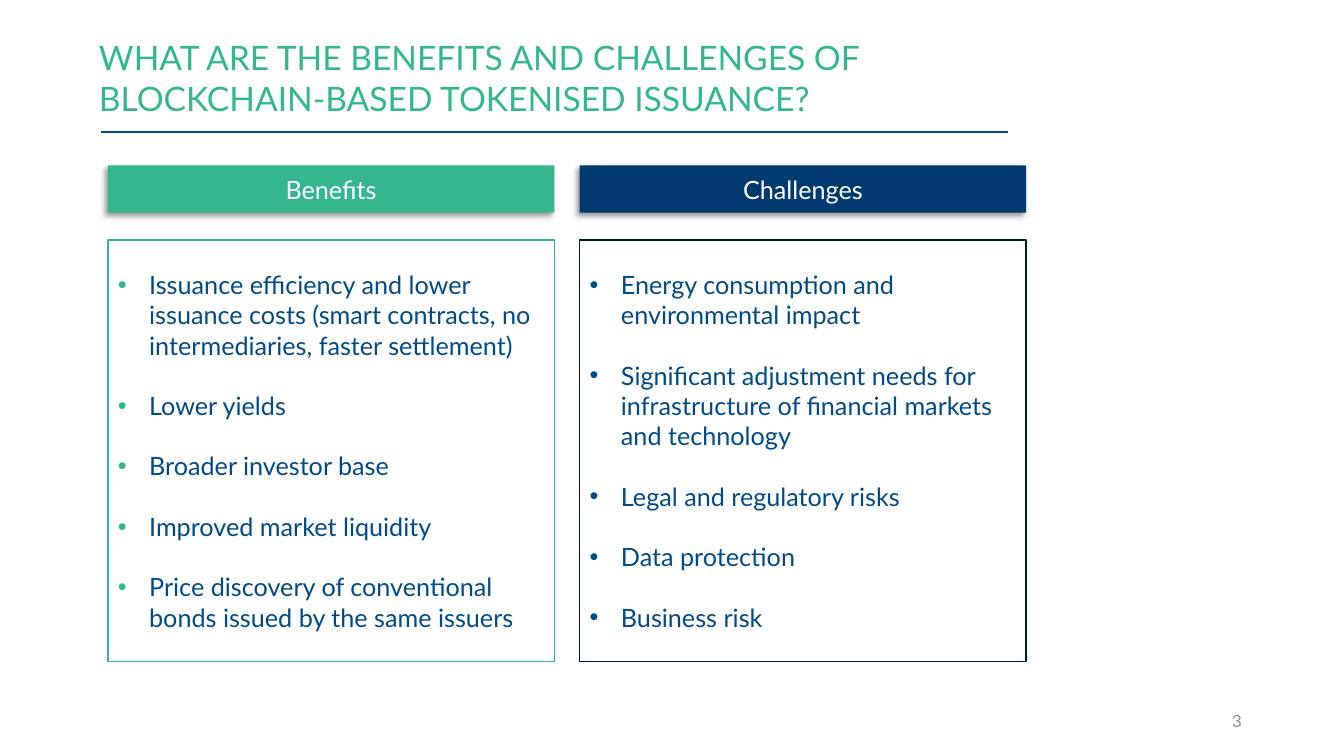
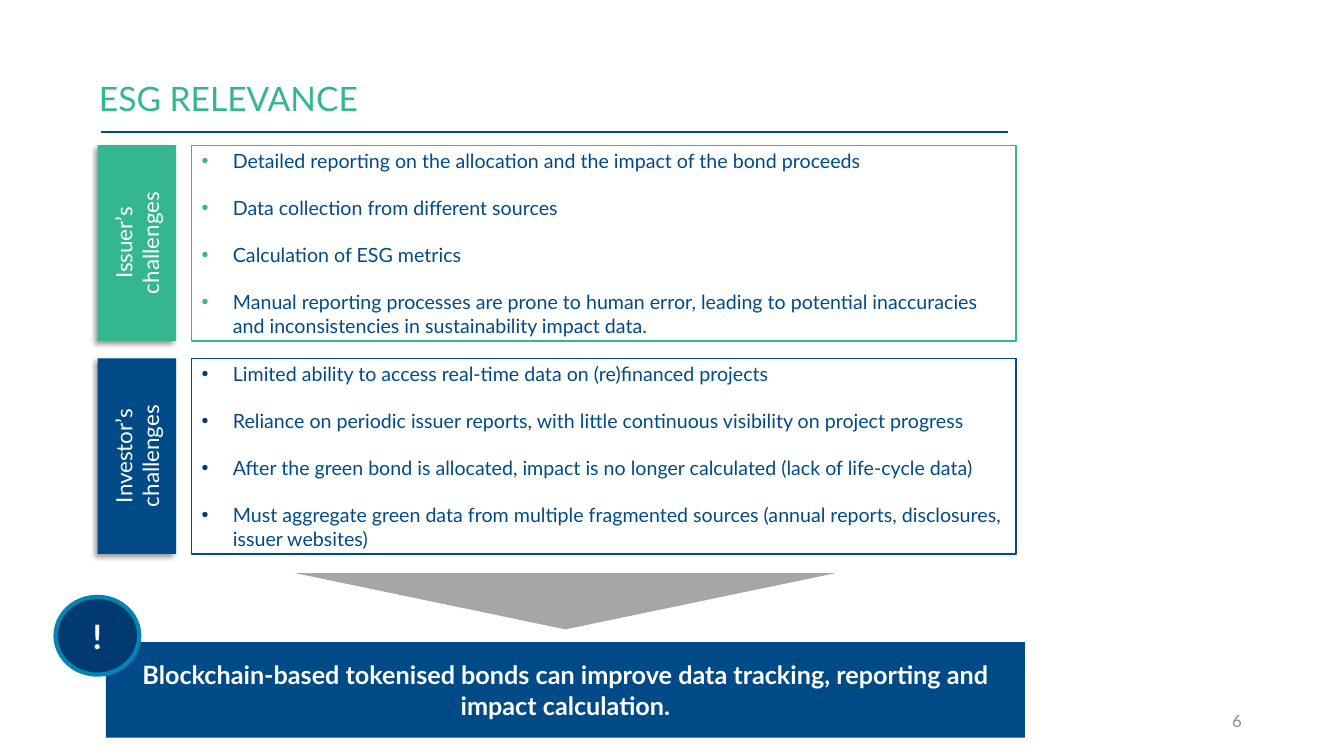
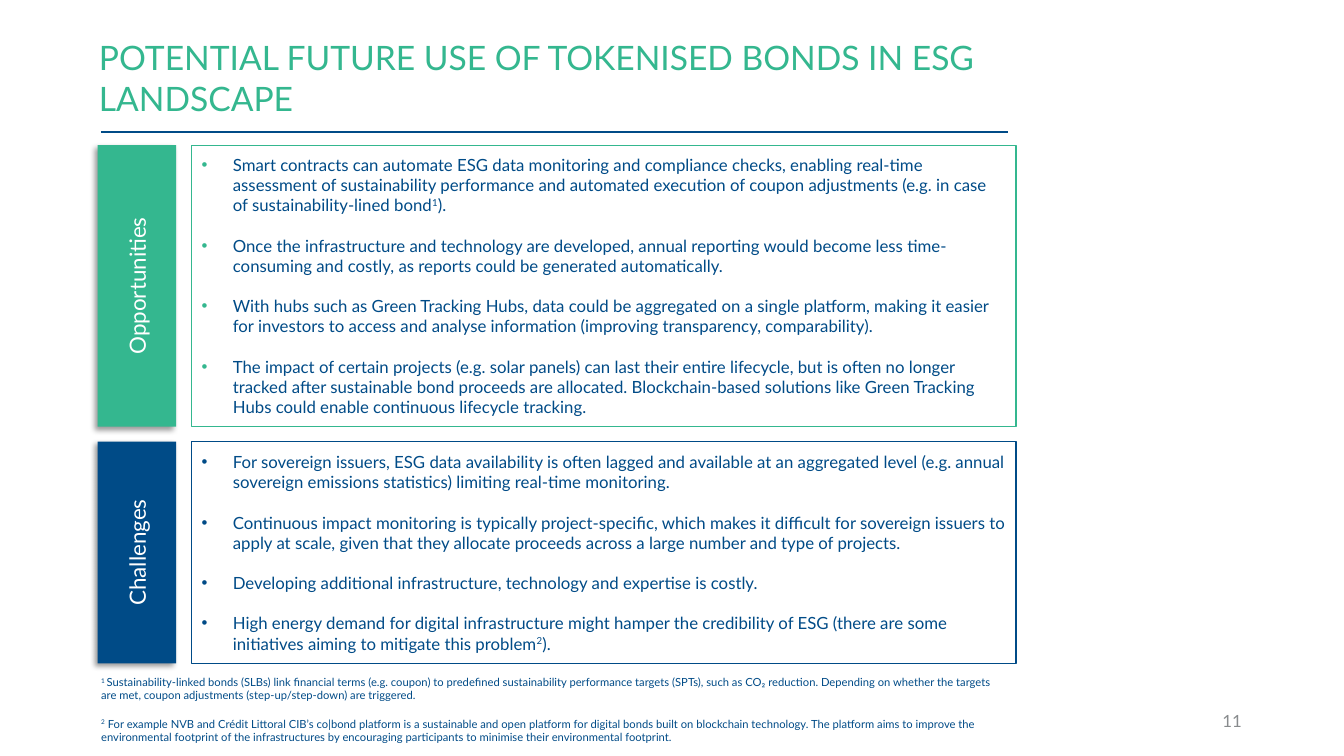
from dataclasses import dataclass

from lxml.etree import SubElement
from pptx import Presentation
from pptx.dml.color import RGBColor
from pptx.enum.shapes import MSO_CONNECTOR, MSO_SHAPE as Preset
from pptx.enum.text import MSO_ANCHOR as Anchor, MSO_AUTO_SIZE as AutoSize, PP_ALIGN as Align
from pptx.oxml.ns import qn
from pptx.util import Cm, Pt


@dataclass(frozen=True)
class Theme:
    font: str = "Lato"
    green: str = "34B78F"
    blue: str = "004B87"
    navy: str = "003A70"
    midnight: str = "001931"
    cyan: str = "0085B4"
    grey: str = "888B8D"
    silver: str = "A6A6A6"
    white: str = "FFFFFF"
    title: int = 24
    lead: int = 18
    tab: int = 16
    body: int = 14
    small: int = 12
    note: int = 8
    line_height: float = 1.2


THEME = Theme()


class Deck:
    def __init__(self):
        self.file = Presentation()
        self.file.slide_width, self.file.slide_height = Cm(33.87), Cm(19.05)
        self.slide = None

    def new_slide(self, title, number):
        """Start a slide with its title, rule and page number."""
        self.slide = self.file.slides.add_slide(self.file.slide_layouts[5])
        heading = self.slide.shapes.title
        heading.left, heading.top, heading.width, heading.height = map(Cm, (2.24, 0.23, 23.2, 2.87))
        self.fill_text(heading.text_frame, [title], THEME.title, THEME.green, anchor=Anchor.BOTTOM)
        rule = self.slide.shapes.add_connector(
            MSO_CONNECTOR.STRAIGHT, Cm(2.54), Cm(3.33), Cm(25.4), Cm(3.33))
        rule.line.color.rgb = RGBColor.from_string(THEME.blue)
        rule.line.width = Pt(1.5)
        SubElement(rule._element.spPr, qn("a:effectLst"))
        self.text((23.93, 17.65, 7.62, 1.02), str(number), THEME.small, THEME.grey,
                  align=Align.RIGHT, anchor=Anchor.MIDDLE)

    def fill_text(self, frame, paragraphs, size, color, align=Align.LEFT, anchor=Anchor.MIDDLE,
                  bold=False, bullet=None):
        """Fill a frame; text between ^ marks is superscript, bullet is the bullet colour."""
        frame.word_wrap = True
        frame.auto_size = AutoSize.NONE
        frame.vertical_anchor = anchor
        for index, content in enumerate(paragraphs):
            paragraph = frame.paragraphs[0] if index == 0 else frame.add_paragraph()
            paragraph.alignment = align
            if bullet:
                self.add_bullet(paragraph, bullet)
                if index:
                    paragraph.space_before = Pt(size * THEME.line_height)
            for part, words in enumerate(content.split("^")):
                if not words:
                    continue
                run = paragraph.add_run()
                run.text = words
                run.font.name, run.font.size, run.font.bold = THEME.font, Pt(size), bold
                run.font.color.rgb = RGBColor.from_string(color)
                if part % 2:
                    run.font._element.set("baseline", "30000")

    def add_bullet(self, paragraph, color):
        props = paragraph._p.get_or_add_pPr()
        props.set("marL", str(Cm(0.79)))
        props.set("indent", str(-Cm(0.79)))
        SubElement(SubElement(props, qn("a:buClr")), qn("a:srgbClr"), val=color)
        SubElement(props, qn("a:buFont"), typeface="Arial")
        SubElement(props, qn("a:buChar"), char="•")

    def text(self, place, content, size, color, align=Align.LEFT, anchor=Anchor.TOP):
        box = self.slide.shapes.add_textbox(*map(Cm, place))
        self.fill_text(box.text_frame, [content], size, color, align, anchor)

    def shape(self, place, fill=None, line=None, line_width=1, preset=Preset.RECTANGLE):
        shape = self.slide.shapes.add_shape(preset, *map(Cm, place))
        shape.shadow.inherit = False
        if fill:
            shape.fill.solid()
            shape.fill.fore_color.rgb = RGBColor.from_string(fill)
        else:
            shape.fill.background()
        if line:
            shape.line.color.rgb = RGBColor.from_string(line)
            shape.line.width = Pt(line_width)
        else:
            shape.line.fill.background()
        return shape

    def label(self, place, lines, fill, size, upright=False):
        """Filled header with a soft shadow; upright text reads from bottom to top."""
        header = self.shape(place, fill)
        effects = header._element.spPr.find(qn("a:effectLst"))
        shadow = SubElement(effects, qn("a:outerShdw"), blurRad=str(Pt(4)), dist=str(Pt(3)),
                            dir=str(135 * 60000), algn="tr", rotWithShape="0")
        tint = SubElement(shadow, qn("a:srgbClr"), val="000000")
        SubElement(tint, qn("a:alpha"), val="40000")
        self.fill_text(header.text_frame, lines, size, THEME.white, Align.CENTER)
        if upright:
            header.text_frame._txBody.bodyPr.set("vert", "vert270")

    def panel(self, place, points, line, bullet, size):
        frame = self.shape(place, line=line).text_frame
        self.fill_text(frame, points, size, THEME.blue, bullet=bullet)

    def column(self, index, heading, points, fill, line, bullet):
        left, width = 2.72 + 11.89 * index, 11.25
        self.panel((left, 6.05, width, 10.62), points, line, bullet, THEME.lead)
        self.label((left, 4.17, width, 1.19), [heading], fill, THEME.lead)

    def row(self, top, height, heading, points, color, bullet, size):
        self.label((2.46, top, 1.98, height), heading, color, THEME.tab, upright=True)
        self.panel((4.83, top, 20.78, height), points, color, bullet, size)

    def conclusion(self, message):
        banner = self.shape((2.67, 16.18, 23.16, 2.41), THEME.blue)
        self.fill_text(banner.text_frame, [message], THEME.lead, THEME.white, Align.CENTER,
                       bold=True)
        arrow = self.shape((13.54, 8.33, 1.42, 13.64), THEME.silver, preset=Preset.PENTAGON)
        arrow.rotation = 90
        arrow.adjustments[0] = 1
        badge = self.shape((1.4, 15.04, 2.11, 1.96), THEME.navy, THEME.cyan, 3, Preset.OVAL)
        self.fill_text(badge.text_frame, ["!"], THEME.title, THEME.white, Align.CENTER, bold=True)


def benefits_and_challenges(deck):
    deck.new_slide("WHAT ARE THE BENEFITS AND CHALLENGES OF BLOCKCHAIN-BASED TOKENISED ISSUANCE?", 3)
    deck.column(0, "Benefits", [
        "Issuance efficiency and lower issuance costs (smart contracts, no intermediaries, "
        "faster settlement)",
        "Lower yields",
        "Broader investor base",
        "Improved market liquidity",
        "Price discovery of conventional bonds issued by the same issuers",
    ], THEME.green, THEME.green, THEME.green)
    deck.column(1, "Challenges", [
        "Energy consumption and environmental impact",
        "Significant adjustment needs for infrastructure of financial markets and technology",
        "Legal and regulatory risks",
        "Data protection",
        "Business risk",
    ], THEME.navy, THEME.midnight, THEME.blue)


def esg_relevance(deck):
    deck.new_slide("ESG RELEVANCE", 6)
    deck.row(3.66, 4.93, ["Issuer’s", "challenges"], [
        "Detailed reporting on the allocation and the impact of the bond proceeds",
        "Data collection from different sources",
        "Calculation of ESG metrics",
        "Manual reporting processes are prone to human error, leading to potential "
        "inaccuracies and inconsistencies in sustainability impact data.",
    ], THEME.green, THEME.green, THEME.body)
    deck.row(9.03, 4.93, ["Investor’s challenges"], [
        "Limited ability to access real-time data on (re)financed projects",
        "Reliance on periodic issuer reports, with little continuous visibility on project progress",
        "After the green bond is allocated, impact is no longer calculated (lack of life-cycle data)",
        "Must aggregate green data from multiple fragmented sources (annual reports, "
        "disclosures, issuer websites)",
    ], THEME.blue, THEME.navy, THEME.body)
    deck.conclusion("Blockchain-based tokenised bonds can improve data tracking, reporting and "
                    "impact calculation.")


def future_use(deck):
    deck.new_slide("POTENTIAL FUTURE USE OF TOKENISED BONDS IN ESG LANDSCAPE", 11)
    deck.row(3.66, 7.09, ["Opportunities"], [
        "Smart contracts can automate ESG data monitoring and compliance checks, enabling "
        "real-time assessment of sustainability performance and automated execution of coupon "
        "adjustments (e.g. in case of sustainability-lined bond^1^).",
        "Once the infrastructure and technology are developed, annual reporting would become "
        "less time-consuming and costly, as reports could be generated automatically.",
        "With hubs such as Green Tracking Hubs, data could be aggregated on a single platform, "
        "making it easier for investors to access and analyse information (improving "
        "transparency, comparability).",
        "The impact of certain projects (e.g. solar panels) can last their entire lifecycle, "
        "but is often no longer tracked after sustainable bond proceeds are allocated. "
        "Blockchain-based solutions like Green Tracking Hubs could enable continuous "
        "lifecycle tracking.",
    ], THEME.green, THEME.green, THEME.small)
    deck.row(11.13, 5.59, ["Challenges"], [
        "For sovereign issuers, ESG data availability is often lagged and available at an "
        "aggregated level (e.g. annual sovereign emissions statistics) limiting real-time "
        "monitoring.",
        "Continuous impact monitoring is typically project-specific, which makes it difficult "
        "for sovereign issuers to apply at scale, given that they allocate proceeds across a "
        "large number and type of projects.",
        "Developing additional infrastructure, technology and expertise is costly.",
        "High energy demand for digital infrastructure might hamper the credibility of ESG "
        "(there are some initiatives aiming to mitigate this problem^2^).",
    ], THEME.blue, THEME.blue, THEME.small)
    footnotes = [
        "^1 ^Sustainability-linked bonds (SLBs) link financial terms (e.g. coupon) to predefined "
        "sustainability performance targets (SPTs), such as CO₂ reduction. Depending on whether "
        "the targets are met, coupon adjustments (step-up/step-down) are triggered.",
        "^2^ For example NVB and Crédit Littoral CIB’s co|bond platform is a sustainable and open "
        "platform for digital bonds built on blockchain technology. The platform aims to improve "
        "the environmental footprint of the infrastructures by encouraging participants to "
        "minimise their environmental footprint.",
    ]
    for index, footnote in enumerate(footnotes):
        deck.text((2.3, 16.89 + 1.05 * index, 23.29, 0.94), footnote, THEME.note, THEME.blue)


def main():
    deck = Deck()
    for build in (benefits_and_challenges, esg_relevance, future_use):
        build(deck)
    deck.file.save("out.pptx")


if __name__ == "__main__":
    main()
